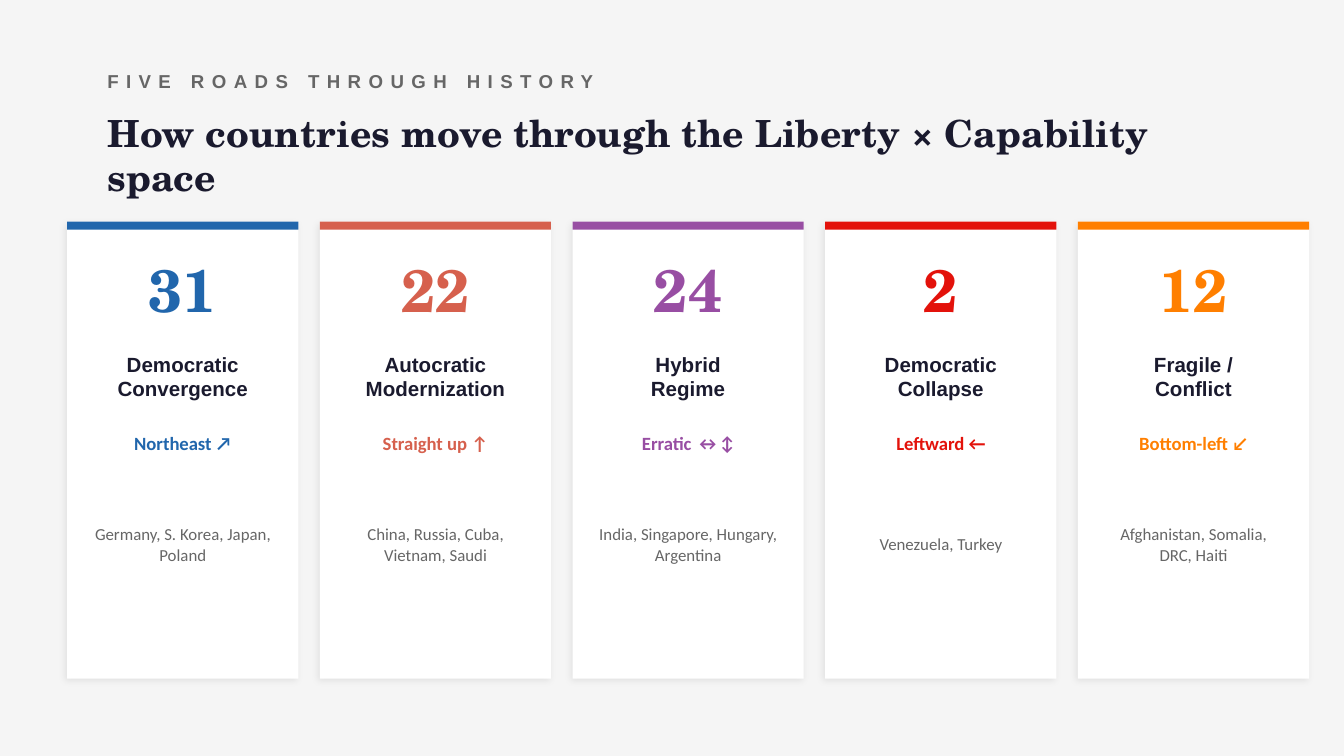
from lxml import etree
from pptx import Presentation
from pptx.dml.color import RGBColor
from pptx.enum.shapes import MSO_SHAPE
from pptx.enum.text import MSO_ANCHOR, MSO_AUTO_SIZE, PP_ALIGN
from pptx.oxml.ns import qn
from pptx.util import Inches, Pt

RECTANGLE = MSO_SHAPE.RECTANGLE
MIDDLE = MSO_ANCHOR.MIDDLE
LEFT, CENTER = PP_ALIGN.LEFT, PP_ALIGN.CENTER

SERIF, SANS, BODY = "TeX Gyre Schola", "Arial", "Calibri"
PAPER = RGBColor(0xF5, 0xF5, 0xF5)
WHITE = RGBColor(0xFF, 0xFF, 0xFF)
INK = RGBColor(0x1A, 0x1A, 0x2E)
GRAY = RGBColor(0x66, 0x66, 0x66)
BLUE = RGBColor(0x21, 0x66, 0xAC)
CORAL = RGBColor(0xD6, 0x60, 0x4D)
PURPLE = RGBColor(0x98, 0x4E, 0xA3)
RED = RGBColor(0xE3, 0x12, 0x0B)
ORANGE = RGBColor(0xFF, 0x7F, 0x00)

KICKER = "FIVE ROADS THROUGH HISTORY"
TITLE = "How countries move through the Liberty × Capability space"
# count, name lines, direction, examples, colour
ROADS = [
    ("31", ["Democratic", "Convergence"], "Northeast ↗",
     "Germany, S. Korea, Japan, Poland", BLUE),
    ("22", ["Autocratic", "Modernization"], "Straight up ↑",
     "China, Russia, Cuba, Vietnam, Saudi", CORAL),
    ("24", ["Hybrid", "Regime"], "Erratic ↔↕",
     "India, Singapore, Hungary, Argentina", PURPLE),
    ("2", ["Democratic", "Collapse"], "Leftward ←",
     "Venezuela, Turkey", RED),
    ("12", ["Fragile /", "Conflict"], "Bottom-left ↙",
     "Afghanistan, Somalia, DRC, Haiti", ORANGE),
]

SLIDE_WIDTH = Inches(10)
SLIDE_HEIGHT = SLIDE_WIDTH * 9 // 16
CARD_LEFT, CARD_TOP, CARD_WIDTH, CARD_HEIGHT = 0.5, 1.65, 1.72, 3.4
CARD_GAP, BAR_HEIGHT, PADDING = 0.16, 0.06, 0.1


def write(box, lines, font, size, color, bold=True, align=CENTER):
    frame = box.text_frame
    frame.word_wrap = True
    frame.auto_size = MSO_AUTO_SIZE.NONE
    frame.vertical_anchor = MIDDLE
    for index, line in enumerate(lines):
        para = frame.add_paragraph() if index else frame.paragraphs[0]
        para.alignment = align
        span = para.add_run()
        span.text = line
        span.font.name = font
        span.font.size = Pt(size)
        span.font.bold = bold
        span.font.color.rgb = color


def add_text(page, left, top, width, height, *content, **style):
    box = page.shapes.add_textbox(*map(Inches, (left, top, width, height)))
    write(box, *content, **style)
    return box


def add_block(page, left, top, width, height, color):
    block = page.shapes.add_shape(
        RECTANGLE, *map(Inches, (left, top, width, height)))
    block.fill.solid()
    block.fill.fore_color.rgb = color
    block.line.fill.background()
    block.shadow.inherit = False
    return block


def add_soft_shadow(block):
    effects = block._element.spPr.find(qn("a:effectLst"))
    shadow = etree.SubElement(
        effects, qn("a:outerShdw"), blurRad=str(Pt(4)), dist=str(Pt(1.5)),
        dir=str(135 * 60000), algn="bl", rotWithShape="0")
    color = etree.SubElement(shadow, qn("a:srgbClr"), val="000000")
    etree.SubElement(color, qn("a:alpha"), val="8000")


def add_card(page, left, count, name, direction, examples, color):
    card = add_block(page, left, CARD_TOP, CARD_WIDTH, CARD_HEIGHT, WHITE)
    add_soft_shadow(card)
    add_block(page, left, CARD_TOP, CARD_WIDTH, BAR_HEIGHT, color)

    number = add_text(page, left, 1.85, CARD_WIDTH, 0.6,
                      [count], SERIF, 32, color)
    frame = number.text_frame
    frame.margin_left = frame.margin_right = 0
    frame.margin_top = frame.margin_bottom = 0

    inner_left, inner_width = left + PADDING, CARD_WIDTH - 2 * PADDING
    add_text(page, inner_left, 2.5, inner_width, 0.6, name, SANS, 11, INK)
    add_text(page, inner_left, 3.15, inner_width, 0.3,
             [direction], BODY, 10, color)
    add_text(page, inner_left, 3.5, inner_width, 1.1,
             [examples], BODY, 9, GRAY, bold=False)


def main():
    deck = Presentation()
    deck.slide_width, deck.slide_height = SLIDE_WIDTH, SLIDE_HEIGHT
    page = deck.slides.add_slide(deck.slide_layouts[5])
    page.background.fill.solid()
    page.background.fill.fore_color.rgb = PAPER

    kicker = add_text(page, 0.7, 0.4, 8, 0.4,
                      [KICKER], SANS, 10, GRAY, align=LEFT)
    for span in kicker.text_frame.paragraphs[0].runs:
        span.font._element.set("spc", "400")

    title = page.shapes.title
    title.left, title.top = Inches(0.7), Inches(0.9)
    title.width, title.height = Inches(8.5), Inches(0.5)
    write(title, [TITLE], SERIF, 20, INK, align=LEFT)

    for index, road in enumerate(ROADS):
        add_card(page, CARD_LEFT + index * (CARD_WIDTH + CARD_GAP), *road)

    deck.save("out.pptx")


if __name__ == "__main__":
    main()
